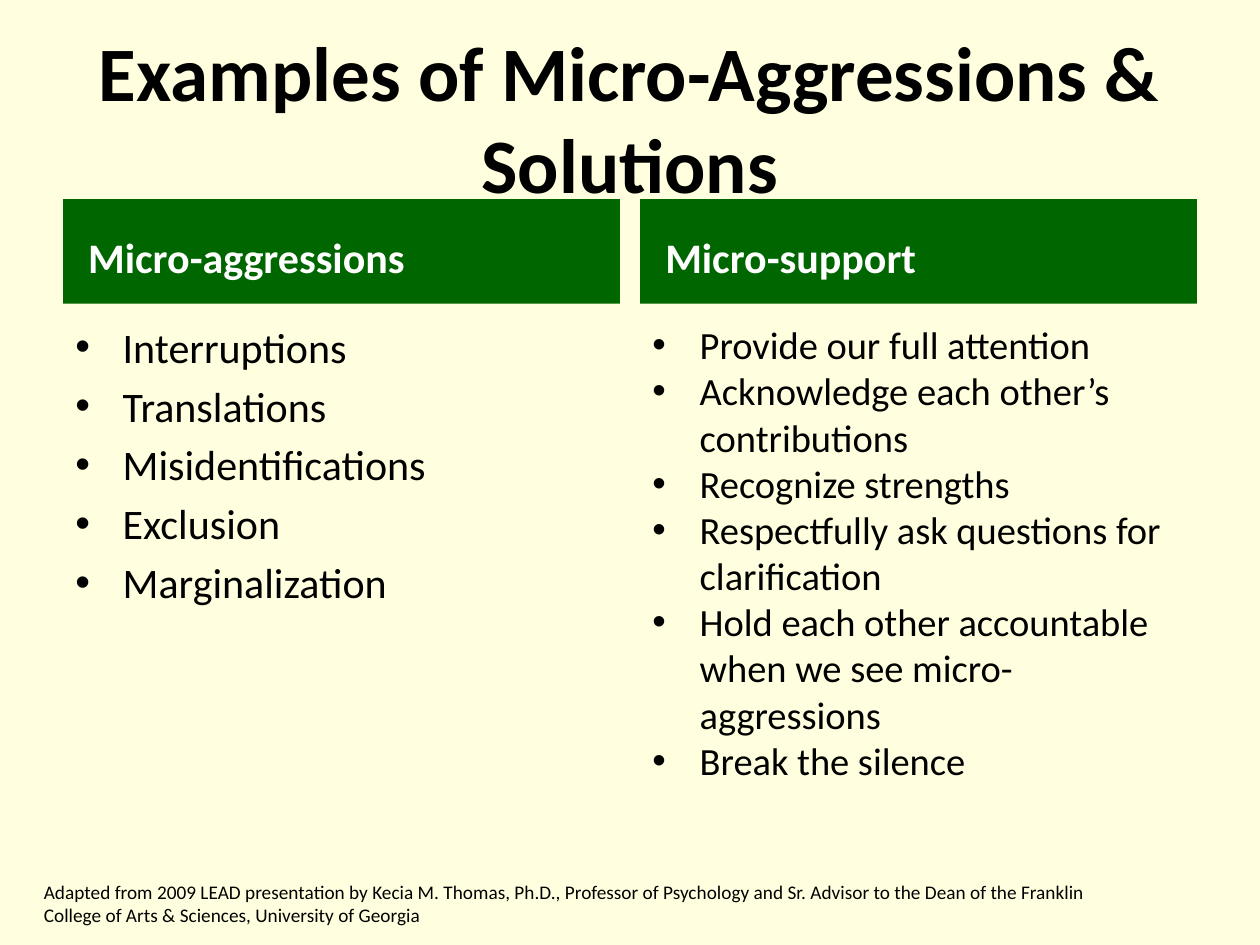
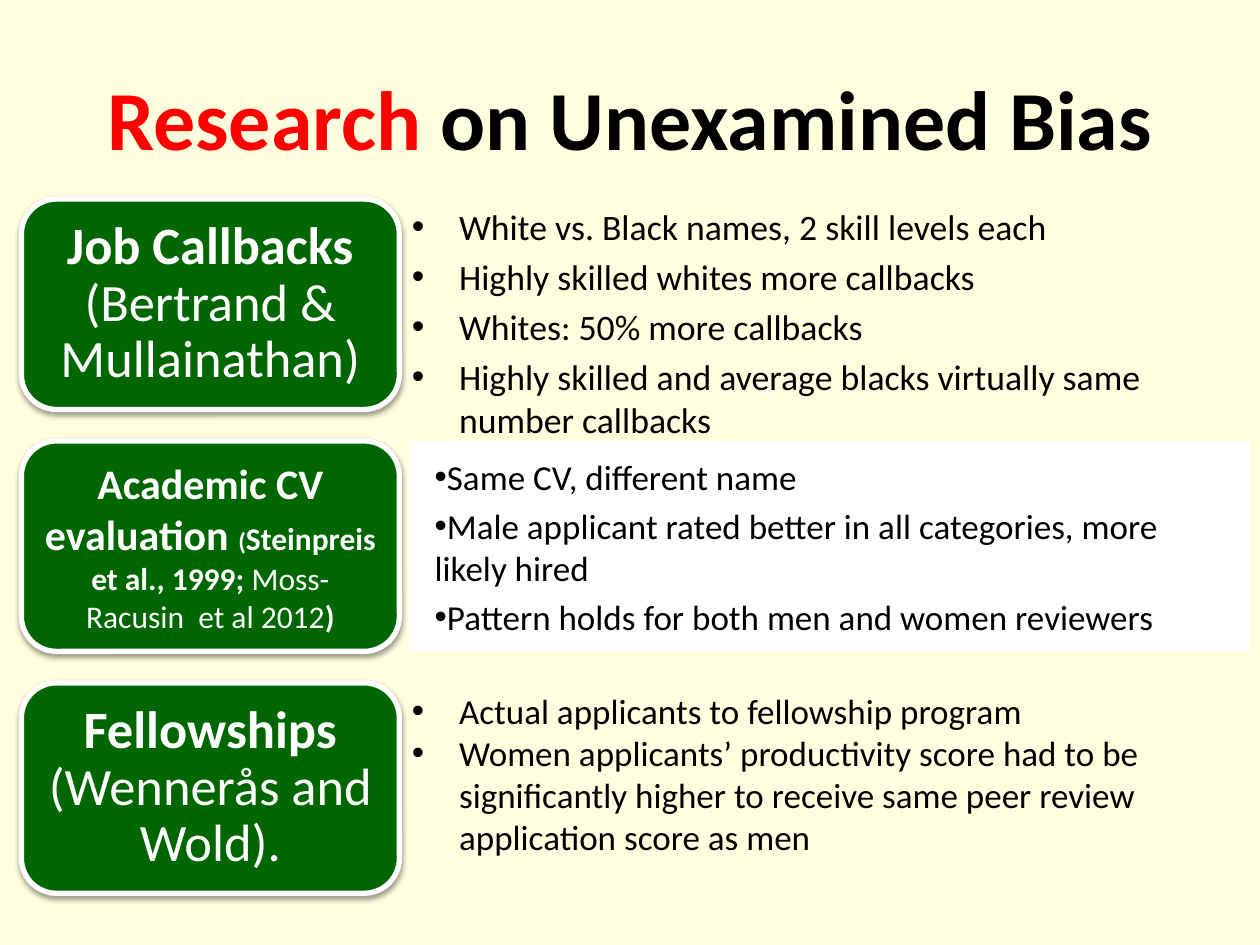
from lxml.etree import SubElement
from pptx import Presentation
from pptx.dml.color import RGBColor
from pptx.enum.shapes import MSO_SHAPE
from pptx.enum.text import MSO_ANCHOR, MSO_AUTO_SIZE, PP_ALIGN
from pptx.oxml.ns import qn
from pptx.util import Inches, Pt

FONT = "Calibri"
BACKGROUND, GREEN, RED = "FFFFDF", "006600", "FF0000"
WHITE, BLACK = "FFFFFF", "000000"
TITLE_BOX = (0.5, 0.3, 9, 1.25)
HANGING_INDENT = 0.375


def color(hex_code):
    return RGBColor.from_string(hex_code)


def set_attributes(target, values):
    for name, value in values.items():
        setattr(target, name, value)


def format_frame(frame, insets=(0.1, 0.05, 0.1, 0.05), anchor=MSO_ANCHOR.TOP):
    """Insets are left, top, right and bottom, in inches."""
    left, top, right, bottom = map(Inches, insets)
    set_attributes(frame, {
        "word_wrap": True, "auto_size": MSO_AUTO_SIZE.NONE,
        "vertical_anchor": anchor, "margin_left": left, "margin_top": top,
        "margin_right": right, "margin_bottom": bottom})


def add_run(paragraph, text, size, hex_code=BLACK, bold=False):
    """A newline at the end of the text becomes a line break."""
    run = paragraph.add_run()
    run.text = text.rstrip("\n")
    set_attributes(run.font, {"name": FONT, "size": Pt(size), "bold": bold})
    run.font.color.rgb = color(hex_code)
    if text.endswith("\n"):
        paragraph.add_line_break()


def add_bullet(paragraph, indent):
    properties = paragraph._p.get_or_add_pPr()
    properties.set("marL", str(Inches(indent)))
    properties.set("indent", str(-Inches(indent)))
    SubElement(properties, qn("a:buFont"), typeface="Arial")
    SubElement(properties, qn("a:buChar"), char="•")


def write_bullets(frame, items, size, spacing=0, indent=HANGING_INDENT):
    """Spacing is the gap between items, as a share of the text size."""
    for index, item in enumerate(items):
        paragraph = frame.add_paragraph() if index else frame.paragraphs[0]
        add_bullet(paragraph, indent)
        paragraph.space_before = Pt(round(size * spacing, 1) if index else 0)
        add_run(paragraph, item, size)


def add_filled_shape(slide, kind, box, fill):
    shape = slide.shapes.add_shape(kind, *map(Inches, box))
    shape.shadow.inherit = False
    shape.fill.solid()
    shape.fill.fore_color.rgb = color(fill)
    shape.line.fill.background()
    return shape


def add_text_box(slide, box):
    frame = slide.shapes.add_textbox(*map(Inches, box)).text_frame
    format_frame(frame)
    return frame


def add_titled_slide(presentation, title_runs, size):
    slide = presentation.slides.add_slide(presentation.slide_layouts[5])
    title = slide.shapes.title
    names = ("left", "top", "width", "height")
    set_attributes(title, dict(zip(names, map(Inches, TITLE_BOX))))
    format_frame(title.text_frame, anchor=MSO_ANCHOR.MIDDLE)
    paragraph = title.text_frame.paragraphs[0]
    paragraph.alignment = PP_ALIGN.CENTER
    for text, hex_code in title_runs:
        add_run(paragraph, text, size, hex_code, bold=True)
    return slide


def add_column(slide, box, heading, items, size, spacing):
    """Green heading band with a bullet list under it."""
    left, top, width, height = box
    band_height, list_offset = 0.83, 0.92
    band = add_filled_shape(slide, MSO_SHAPE.RECTANGLE,
                            (left, top, width, band_height), GREEN)
    format_frame(band.text_frame, (0.2, 0.14, 0.1, 0.05), MSO_ANCHOR.MIDDLE)
    paragraph = band.text_frame.paragraphs[0]
    paragraph.alignment = PP_ALIGN.LEFT
    add_run(paragraph, heading, 24, WHITE, bold=True)
    frame = add_text_box(
        slide, (left, top + list_offset, width, height - list_offset))
    write_bullets(frame, items, size, spacing)


def add_shadow(shape):
    effects = shape._element.spPr.find(qn("a:effectLst"))
    shadow = SubElement(effects, qn("a:outerShdw"), blurRad=str(Pt(3.1)),
                        dist=str(Pt(1.6)), dir="5400000", rotWithShape="0")
    shade = SubElement(shadow, qn("a:srgbClr"), val=BLACK)
    SubElement(shade, qn("a:alpha"), val="38000")


def add_study_card(slide, box, runs, line_spacing):
    card = add_filled_shape(slide, MSO_SHAPE.ROUNDED_RECTANGLE, box, GREEN)
    card.line.color.rgb = color(WHITE)
    card.line.width = Pt(3)
    add_shadow(card)
    format_frame(card.text_frame, anchor=MSO_ANCHOR.MIDDLE)
    paragraph = card.text_frame.paragraphs[0]
    set_attributes(paragraph, {"alignment": PP_ALIGN.CENTER,
                               "line_spacing": line_spacing})
    for text, size, bold in runs:
        add_run(paragraph, text, size, WHITE, bold)


def add_findings_panel(slide, box, items, size, spacing):
    panel = add_filled_shape(slide, MSO_SHAPE.RECTANGLE, box, WHITE)
    format_frame(panel.text_frame, (0.2, 0.05, 0.1, 0.05), MSO_ANCHOR.MIDDLE)
    write_bullets(panel.text_frame, items, size, spacing, indent=0)
    for paragraph in panel.text_frame.paragraphs:
        paragraph.alignment = PP_ALIGN.LEFT


def add_study_row(slide, box, study):
    left, top, width, height = box
    card_width = 3
    add_study_card(slide, (left, top, card_width, height), study["card"],
                   study.get("line_spacing", 0.9))
    findings = (study["findings"], study["size"], study["spacing"])
    if study.get("panel"):
        add_findings_panel(slide, (left + 3.08, top, 6.67, height), *findings)
    else:
        frame = add_text_box(slide, (left + card_width, top,
                                     width - card_width, height))
        write_bullets(frame, *findings)


def build_examples_slide(presentation):
    slide = add_titled_slide(
        presentation, [("Examples of Micro-Aggressions & Solutions", BLACK)], 44)
    columns = [
        ("Micro-aggressions",
         ["Interruptions", "Translations", "Misidentifications", "Exclusion",
          "Marginalization"], 24, 0.2),
        ("Micro-support",
         ["Provide our full attention",
          "Acknowledge each other’s contributions",
          "Recognize strengths",
          "Respectfully ask questions for clarification",
          "Hold each other accountable when we see micro-aggressions",
          "Break the silence"], 22, 0),
    ]
    for index, column in enumerate(columns):
        add_column(slide, (0.5 + index * 4.58, 1.58, 4.42, 5.23), *column)
    credit = add_text_box(slide, (0.25, 6.94, 8.83, 0.47))
    add_run(credit.paragraphs[0],
            "Adapted from 2009 LEAD presentation by Kecia M. Thomas, Ph.D., "
            "Professor of Psychology and Sr. Advisor to the Dean of the Franklin "
            "College of Arts & Sciences, University of Georgia", 11)


def build_research_slide(presentation):
    slide = add_titled_slide(
        presentation, [("Research", RED), (" on Unexamined Bias", BLACK)], 48)
    studies = [
        {"card": [("Job Callbacks\n", 30, True),
                  ("(Bertrand & Mullainathan)", 30, False)],
         "findings": ["White vs. Black names, 2 skill levels each",
                      "Highly skilled whites more callbacks",
                      "Whites: 50% more callbacks",
                      "Highly skilled and average blacks virtually same "
                      "number callbacks"],
         "size": 20.4, "spacing": 0.2},
        {"card": [("Academic CV evaluation ", 24, True), ("(", 14, True),
                  ("Steinpreis et al., 1999; ", 18, True),
                  ("Moss-Racusin  et al 2012", 18, False), (")", 18, True)],
         "line_spacing": 1.0, "panel": True,
         "findings": ["Same CV, different name",
                      "Male applicant rated better in all categories, more "
                      "likely hired",
                      "Pattern holds for both men and women reviewers"],
         "size": 20, "spacing": 0.2},
        {"card": [("Fellowships\n", 30, True),
                  ("(Wennerås and Wold).", 30, False)],
         "findings": ["Actual applicants to fellowship program",
                      "Women applicants’ productivity score had to be "
                      "significantly higher to receive same peer review "
                      "application score as men"],
         "size": 20, "spacing": 0},
    ]
    for index, study in enumerate(studies):
        add_study_row(slide, (0.17, 1.58 + index * 1.92, 9.83, 1.67), study)


def main():
    presentation = Presentation()
    set_attributes(presentation, {"slide_width": Inches(10),
                                  "slide_height": Inches(7.5)})
    background = presentation.slide_master.background.fill
    background.solid()
    background.fore_color.rgb = color(BACKGROUND)
    build_examples_slide(presentation)
    build_research_slide(presentation)
    presentation.save("out.pptx")


if __name__ == "__main__":
    main()
